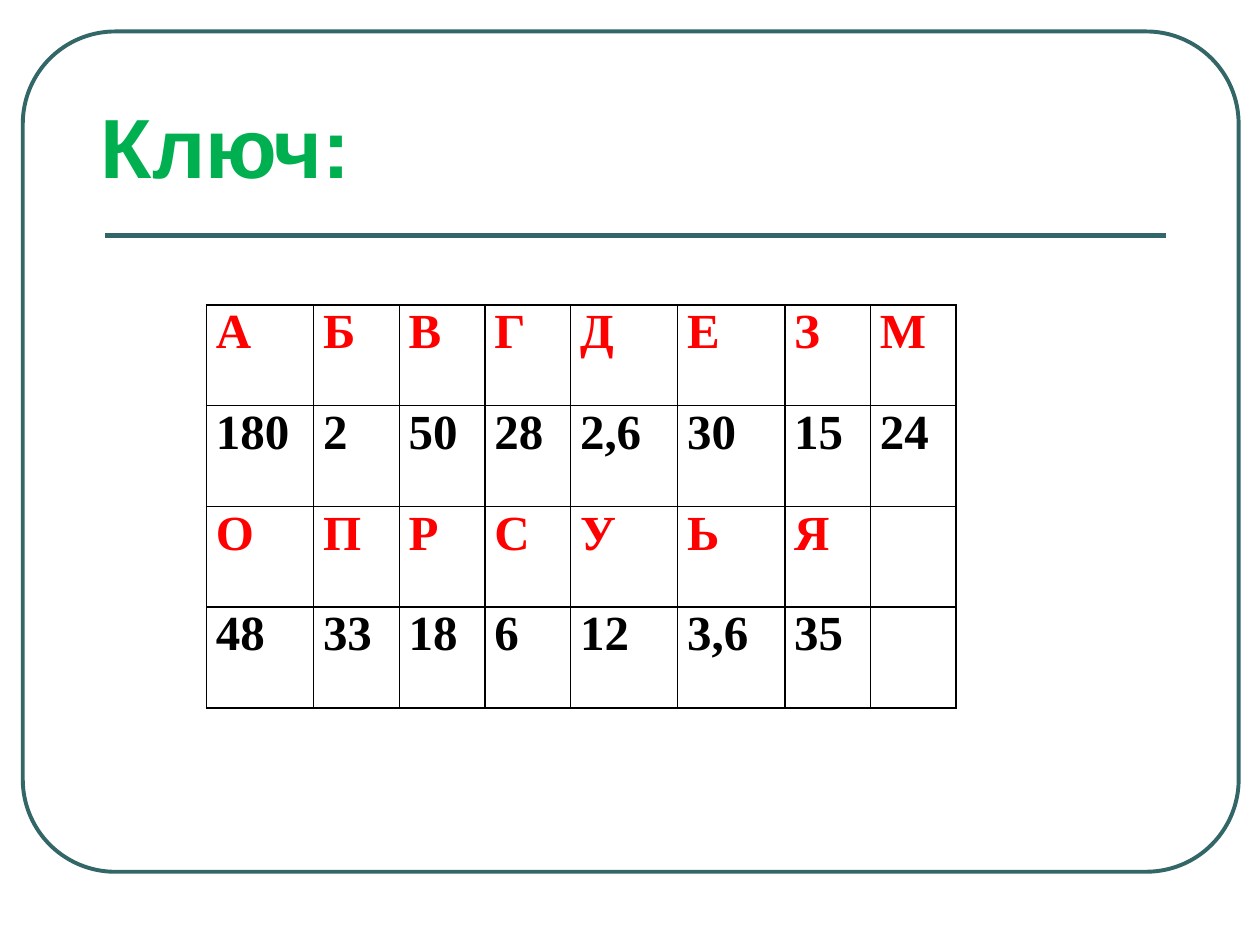
from lxml.etree import SubElement as Sub
from pptx import Presentation
from pptx.dml.color import RGBColor
from pptx.enum.shapes import MSO_CONNECTOR as Conn, MSO_SHAPE as Shape
from pptx.enum.text import MSO_ANCHOR as Anchor, PP_ALIGN as Align
from pptx.oxml.ns import qn
from pptx.util import Pt

TEAL = RGBColor(0x33, 0x66, 0x66)
GREEN = RGBColor(0x00, 0xB0, 0x50)
RED = RGBColor(0xFF, 0x00, 0x00)
BLACK = RGBColor(0x00, 0x00, 0x00)

WIDE, SLIM, HIGH = 61.2, 48.96, 57.6
COLS = [WIDE, SLIM, SLIM, SLIM, WIDE, WIDE, SLIM, SLIM]
ROWS = [
    ["А", "Б", "В", "Г", "Д", "Е", "З", "М"],
    ["180", "2", "50", "28", "2,6", "30", "15", "24"],
    ["О", "П", "Р", "С", "У", "Ь", "Я", ""],
    ["48", "33", "18", "6", "12", "3,6", "35", ""],
]


def set_font(para, name, size, color):
    font = para.font
    font.name, font.size, font.bold = name, Pt(size), True
    font.color.rgb = color


def add_frame(slide):
    frame = slide.shapes.add_shape(
        Shape.ROUNDED_RECTANGLE, Pt(13), Pt(18), Pt(694.8), Pt(480.2))
    frame.adjustments[0] = 0.11
    frame.shadow.inherit = False
    frame.fill.background()
    frame.line.color.rgb = TEAL
    frame.line.width = Pt(2.25)


def add_rule(slide):
    y = Pt(134.6)
    rule = slide.shapes.add_connector(Conn.STRAIGHT, Pt(60), y, Pt(666), y)
    rule.line.color.rgb = TEAL
    rule.line.width = Pt(3)
    Sub(rule._element.spPr, qn("a:effectLst"))


def add_title(slide, text):
    title = slide.shapes.title
    title.left, title.top = Pt(50.4), Pt(50.4)
    title.width, title.height = Pt(292.3), Pt(123.8)
    frame = title.text_frame
    frame.text = text
    frame.word_wrap = True
    frame.vertical_anchor = Anchor.TOP
    para = frame.paragraphs[0]
    para.alignment = Align.LEFT
    set_font(para, "Arial", 48, GREEN)


def add_edges(cell):
    props = cell._tc.get_or_add_tcPr()
    for side in ("lnL", "lnR", "lnT", "lnB"):
        edge = Sub(props, qn(f"a:{side}"), w=str(Pt(1)))
        fill = Sub(edge, qn("a:solidFill"))
        Sub(fill, qn("a:srgbClr"), val=str(BLACK))


def fill_cell(cell, text, color):
    cell.margin_left = cell.margin_right = Pt(5.4)
    cell.margin_top = cell.margin_bottom = 0
    add_edges(cell)
    cell.fill.background()
    cell.text = text
    para = cell.text_frame.paragraphs[0]
    para.alignment = Align.JUSTIFY
    set_font(para, "Times New Roman", 28, color)


def add_key(slide):
    table = slide.shapes.add_table(
        len(ROWS), len(COLS), Pt(118), Pt(174.2),
        Pt(sum(COLS)), Pt(HIGH * len(ROWS))).table
    table.first_row = table.horz_banding = False
    for col, width in zip(table.columns, COLS):
        col.width = Pt(width)
    # Letters in red, their numbers below in black
    for r, texts in enumerate(ROWS):
        table.rows[r].height = Pt(HIGH)
        for c, text in enumerate(texts):
            fill_cell(table.cell(r, c), text, BLACK if r % 2 else RED)


def main():
    deck = Presentation()
    deck.slide_width, deck.slide_height = Pt(720), Pt(540)
    slide = deck.slides.add_slide(deck.slide_layouts[5])
    # Decoration
    add_frame(slide)
    add_rule(slide)
    # Content
    add_key(slide)
    add_title(slide, "Ключ:")
    deck.save("out.pptx")


if __name__ == "__main__":
    main()
